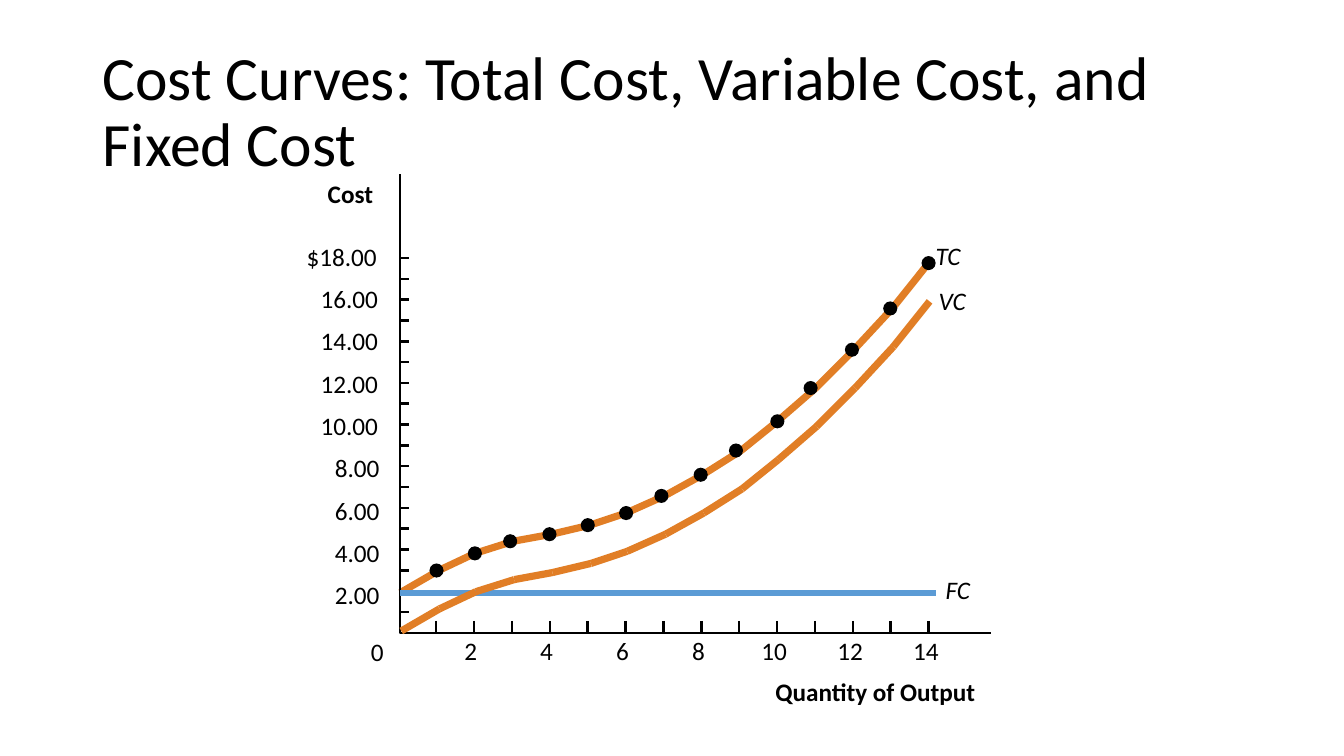
"""Build the cost curves slide."""
from dataclasses import dataclass

from lxml import etree
from pptx import Presentation
from pptx import util as u
from pptx.dml.color import RGBColor
from pptx.enum import shapes, text
from pptx.oxml import ns


@dataclass(frozen=True)
class Theme:
    """Colours and type sizes of the slide."""
    ink: str = "000000"
    curve: str = "E17E26"
    fixed: str = "5B9BD5"
    font: str = "Calibri"
    title: int = 44
    label: int = 18
    thin: float = 1.75
    thick: float = 5.13
    medium: float = 4.5


THEME = Theme()
PX = 9144
AXIS_X, AXIS_Y = 397, 628
OUTPUTS = range(1, 15)
TOTAL_COST = [
    (397, 588), (435, 566), (471, 549), (509, 537), (547, 530),
    (585, 521), (621, 509), (659, 492), (697, 471), (735, 447),
    (771, 418), (809, 385), (847, 347), (885, 306), (921, 261),
]
VARIABLE_COST = [(x + 1, y + 38) for x, y in TOTAL_COST]
DOT_X = [433, 471, 506, 545, 583, 621, 656, 695, 730, 771, 804, 845, 883, 921]


def px(length):
    """Turn px into EMU."""
    return u.Emu(round(length * PX))


def style_line(line, color, width):
    """Set the colour and width of a line."""
    line.color.rgb = RGBColor.from_string(color)
    line.width = u.Pt(width)


def add_line(parent, start, end, color=THEME.ink, width=THEME.thin):
    """Draw a straight line without a shadow."""
    line = parent.shapes.add_connector(
        shapes.MSO_CONNECTOR.STRAIGHT, *map(px, (*start, *end)))
    style_line(line.line, color, width)
    etree.SubElement(line._element.spPr, ns.qn("a:effectLst"))


def add_text(parent, wording, left, top, width, height=30, *, size=THEME.label,
             bold=False, italic=False, wrap=False, inset=(0, 0),
             anchor=text.MSO_ANCHOR.TOP, spacing=None):
    """Place one paragraph of text in the given format."""
    box = parent.shapes.add_textbox(*map(px, (left, top, width, height)))
    frame = box.text_frame
    frame.word_wrap = wrap
    frame.vertical_anchor = anchor
    frame.margin_left = frame.margin_right = px(inset[0])
    frame.margin_top = frame.margin_bottom = px(inset[1])
    para = frame.paragraphs[0]
    para.line_spacing = spacing
    span = para.add_run()
    span.text = wording
    span.font.name = THEME.font
    span.font.size = u.Pt(size)
    span.font.bold = bold
    span.font.italic = italic
    span.font.color.rgb = RGBColor.from_string(THEME.ink)


def add_curve(parent, points):
    """Join the points of a cost curve with thick segments."""
    for start, end in zip(points, points[1:]):
        add_line(parent, end, start, THEME.curve, THEME.thick)


def add_dots(parent, centers, size=14):
    """Mark each center with a filled dot."""
    for x, y in centers:
        dot = parent.shapes.add_shape(
            shapes.MSO_SHAPE.OVAL,
            *map(px, (x - size / 2, y - size / 2, size, size)))
        dot.shadow.inherit = False
        dot.fill.solid()
        dot.fill.fore_color.rgb = RGBColor.from_string(THEME.ink)
        dot.line.fill.background()


def add_axes(page):
    """Draw both axes as one open outline."""
    builder = page.shapes.build_freeform(AXIS_X, 173, scale=PX)
    builder.add_line_segments([(AXIS_X, AXIS_Y), (983, AXIS_Y)], close=False)
    axes = builder.convert_to_shape()
    axes.shadow.inherit = False
    axes.fill.background()
    style_line(axes.line, THEME.ink, THEME.thin)


def add_cost_ticks(page):
    """Draw the ticks of the cost axis."""
    for step in range(18):
        y = 256 + 20.65 * step
        add_line(page, (AXIS_X, y), (AXIS_X + 9, y))


def add_output_ticks(page):
    """Draw the ticks of the output axis."""
    for output in OUTPUTS:
        x = 395 + 37.57 * output
        add_line(page, (x, AXIS_Y - 12), (x, AXIS_Y))


def add_axis_labels(page):
    """Write the names and values along both axes."""
    for row, cost in enumerate(range(18, 0, -2)):
        wording = f"{'' if row else '$'}{cost}.00"
        extra = len(wording) - 4
        add_text(page, wording, 332 - 14 * extra, 239 + 42 * row, 45 + 13 * extra)
    for column, output in enumerate(OUTPUTS[1::2]):
        width = 13 * len(str(output))
        center = 467 + 75.3 * column
        add_text(page, str(output), center - width / 2, 630, width)
    add_text(page, "0", 368, 631, 13)
    add_text(page, "Cost", 325, 177, 45, bold=True)
    add_text(page, "Quantity of Output", 769, 671, 200, bold=True)


def main():
    """Build and save the slide."""
    deck = Presentation()
    deck.slide_width, deck.slide_height = px(1333), px(750)
    page = deck.slides.add_slide(deck.slide_layouts[6])

    add_cost_ticks(page)
    add_curve(page.shapes.add_group_shape(), TOTAL_COST)
    add_output_ticks(page)
    add_axes(page)
    add_dots(page.shapes.add_group_shape(),
             [(x, y) for x, (_, y) in zip(DOT_X, TOTAL_COST[1:])])
    add_axis_labels(page)
    add_text(page, "TC", 928, 238, 25, italic=True)

    fixed = page.shapes.add_group_shape()
    add_line(fixed, (AXIS_X, 588), (928, 588), THEME.fixed, THEME.medium)
    add_text(fixed, "FC", 928, 565, 55, 40, italic=True, wrap=True, inset=(10, 5))

    variable = page.shapes.add_group_shape()
    add_curve(variable, VARIABLE_COST)
    add_text(variable, "VC", 921, 278, 55, 40, italic=True, wrap=True, inset=(10, 5))

    add_text(page, "Cost Curves: Total Cost, Variable Cost, and Fixed Cost",
             92, 40, 1150, 145, size=THEME.title, wrap=True, inset=(10, 5),
             anchor=text.MSO_ANCHOR.MIDDLE, spacing=0.9)
    deck.save("out.pptx")


if __name__ == "__main__":
    main()
